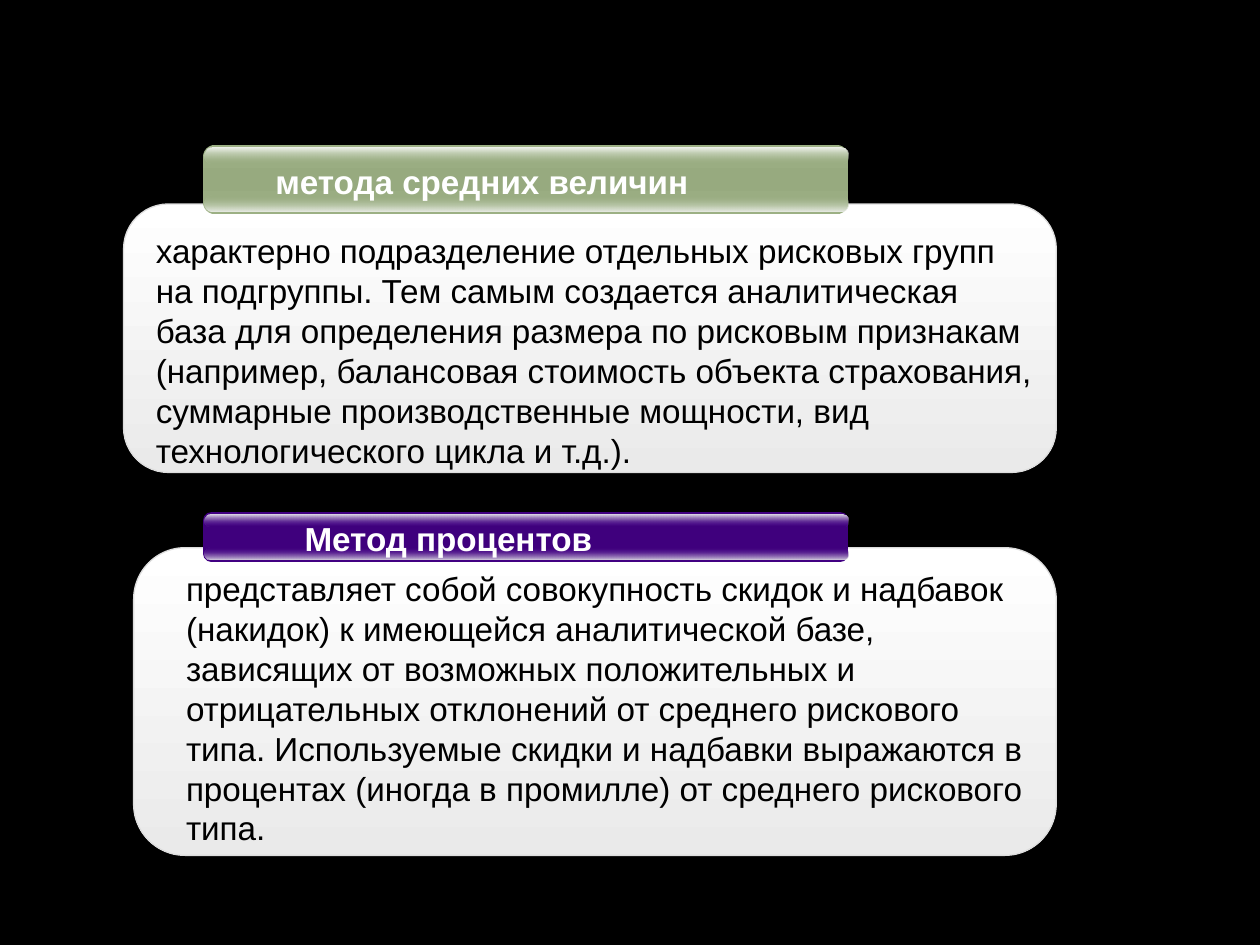
from lxml.etree import SubElement
from pptx import Presentation
from pptx.dml.color import RGBColor
from pptx.enum.shapes import MSO_SHAPE
from pptx.oxml.ns import qn
from pptx.util import Pt


def color(value):
    return RGBColor.from_string(value)


def fill_gradient(shape, stops):
    shape.fill.gradient()
    shape.fill.gradient_angle = 270
    stop_list = next(shape.element.spPr.iter(qn("a:gsLst")))
    stop_list.clear()
    for position, value, opacity in stops:
        stop = SubElement(stop_list, qn("a:gs"), pos=str(position * 1000))
        tone = SubElement(stop, qn("a:srgbClr"), val=value)
        if opacity < 100:
            SubElement(tone, qn("a:alpha"), val=str(opacity * 1000))


def add_rounded(shapes, box, radius, stops, line=None):
    shape = shapes.add_shape(MSO_SHAPE.ROUNDED_RECTANGLE, *map(Pt, box))
    shape.adjustments[0] = radius
    shape.shadow.inherit = False
    fill_gradient(shape, stops)
    if line:
        shape.line.color.rgb = color(line)
        shape.line.width = Pt(0.75)
    else:
        shape.line.fill.background()


def add_text(slide, box, text, font_color, bold=False, wrap=True):
    frame = slide.shapes.add_textbox(*map(Pt, box)).text_frame
    frame.word_wrap = wrap
    paragraph = frame.paragraphs[0]
    paragraph.text = text
    paragraph.font.name = "Arial"
    paragraph.font.size = Pt(19)
    paragraph.font.bold = bold
    paragraph.font.color.rgb = color(font_color)


def add_header(slide, box, edge, middle, light_top, light_bottom):
    left, top, width, height = box
    shapes = slide.shapes.add_group_shape().shapes
    add_rounded(shapes, box, 0.175, [(0, edge, 100), (50, middle, 100), (100, edge, 100)])
    gloss_height = round(height * 0.235, 2)
    glosses = [
        (top + height - gloss_height - 1.5, [(0, edge, 0), (100, light_bottom, 100)]),
        (top + 1.5, [(0, light_top, 100), (100, edge, 0)]),
    ]
    for gloss_top, stops in glosses:
        add_rounded(shapes, (left + 0.9, gloss_top, width - 1, gloss_height), 0.5, stops)


def add_method(slide, panel, header, header_colors, title_box, title, title_wrap, text_box, text):
    add_rounded(slide.shapes, panel, 0.167, [(0, "FFFFFF", 100), (100, "EAEAEA", 100)], "DDDDDD")
    add_header(slide, header, *header_colors)
    add_text(slide, title_box, title, "FFFFFF", bold=True, wrap=title_wrap)
    add_text(slide, text_box, text, "000000")


def main():
    presentation = Presentation()
    presentation.slide_width, presentation.slide_height = Pt(720), Pt(540)
    slide = presentation.slides.add_slide(presentation.slide_layouts[6])
    slide.background.fill.solid()
    slide.background.fill.fore_color.rgb = color("000000")

    add_method(
        slide,
        panel=(70.6, 116.6, 533, 153.4),
        header=(116, 82.8, 369, 39.6),
        header_colors=("9CB084", "97AA7F", "F3F5F1", "F0F2EE"),
        title_box=(150.3, 88.6, 278, 30.2),
        title="метода средних величин",
        title_wrap=True,
        text_box=(82, 128.2, 516.3, 145.4),
        text="характерно подразделение отдельных рисковых групп на подгруппы. "
        "Тем самым создается аналитическая база для определения размера по рисковым "
        "признакам (например, балансовая стоимость объекта страхования, суммарные "
        "производственные мощности, вид технологического цикла и т.д.).",
    )
    add_method(
        slide,
        panel=(76.4, 313, 527.2, 175.8),
        header=(116, 292.6, 369, 28.6),
        header_colors=("410082", "3F007D", "E9E8ED", "E2E0E7"),
        title_box=(167, 292.6, 186, 30.2),
        title="Метод процентов",
        title_wrap=False,
        text_box=(99.2, 321.3, 493.2, 168.5),
        text="представляет собой совокупность скидок и надбавок (накидок) к имеющейся "
        "аналитической базе, зависящих от возможных положительных и отрицательных "
        "отклонений от среднего рискового типа. Используемые скидки и надбавки выражаются "
        "в процентах (иногда в промилле) от среднего рискового типа.",
    )
    presentation.save("out.pptx")


if __name__ == "__main__":
    main()
